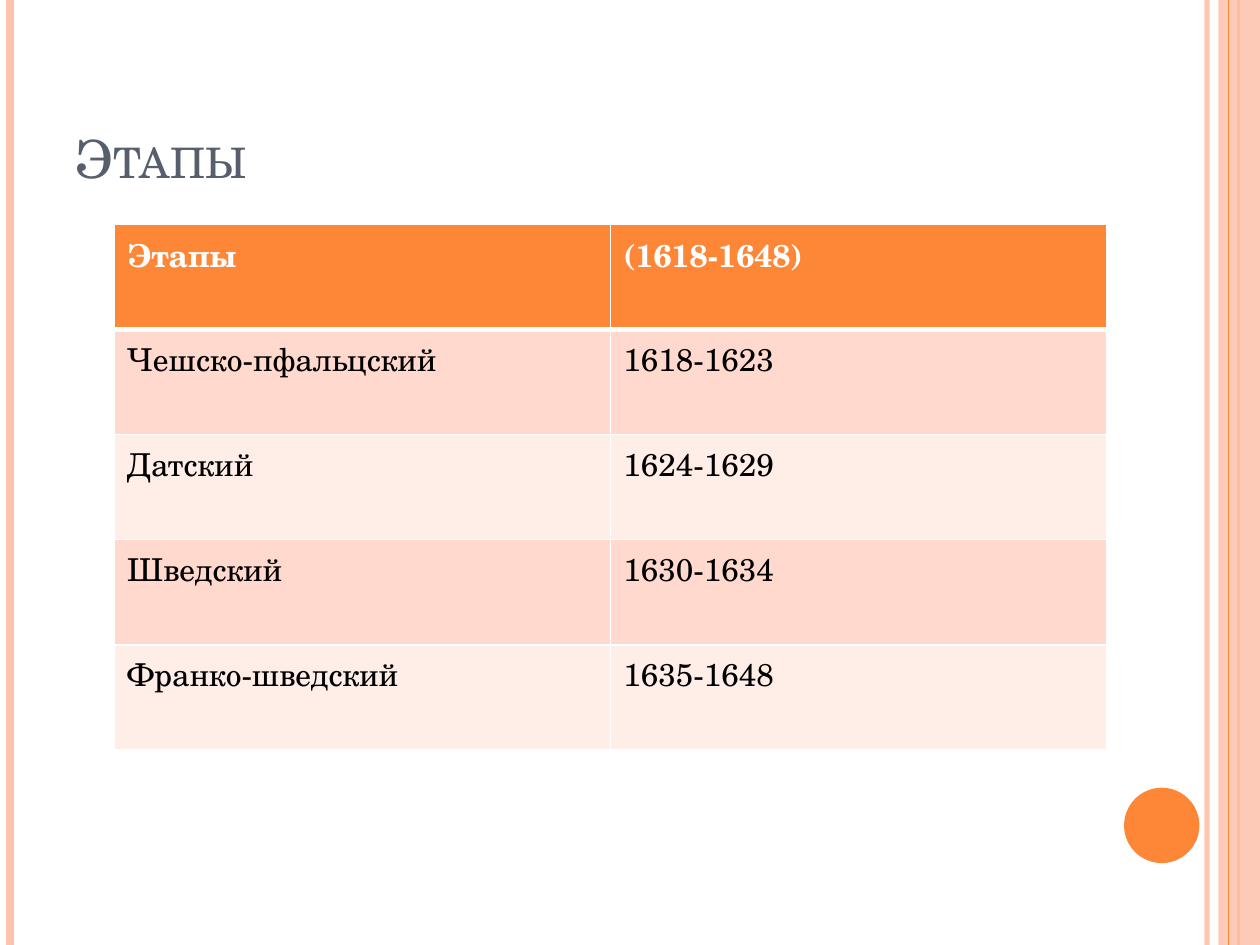
from pptx import Presentation
from pptx.util import Cm, Pt
from pptx.dml.color import RGBColor
from pptx.enum.shapes import MSO_CONNECTOR as Conn, MSO_SHAPE as Kind
from pptx.enum.text import MSO_ANCHOR as Anchor, PP_ALIGN as Align
from pptx.oxml.ns import qn
from lxml.etree import SubElement as Sub

FACE = "TeX Gyre Schola"
PEACH, ORANGE, WHITE = "FEC3AE", "FE8637", "FFFFFF"
tint = RGBColor.from_string


def style(run, hue, **form):
    for key, val in {"name": FACE, **form}.items():
        setattr(run.font, key, val)
    run.font.color.rgb = tint(hue)


def fade(fill, part):
    hue = fill._xPr.find(qn("a:solidFill"))[0]
    Sub(hue, qn("a:alpha")).set("val", str(part * 1000))


deck = Presentation()
deck.slide_width, deck.slide_height = Cm(25.4), Cm(19.05)
slide = deck.slides.add_slide(deck.slide_layouts[5])
shapes = slide.shapes

# Side stripes and band, from back to front
for x, hue, width, part in [
    (24.33, PEACH, 3, 93),
    (0.2, PEACH, 4.5, 100),
    (24.97, ORANGE, 1.5, 100),
    (24.56, PEACH, None, 87),
    (24.77, ORANGE, 0.75, 100),
]:
    if width:
        line = shapes.add_connector(Conn.STRAIGHT, Cm(x), 0, Cm(x), Cm(19.05))
        line.line.width = Pt(width)
        fill = line.line.fill
        fill.solid()
        fill.fore_color.rgb = tint(hue)
        Sub(line._element.spPr, qn("a:effectLst"))
    else:
        band = shapes.add_shape(Kind.RECTANGLE, Cm(x), 0, Cm(0.84), Cm(19.05))
        band.shadow.inherit = False
        band.line.fill.background()
        fill = band.fill
        fill.solid()
        fill.fore_color.rgb = tint(hue)
    if part < 100:
        fade(fill, part)

# Corner disc
disc = shapes.add_shape(Kind.OVAL, Cm(22.66), Cm(15.88), Cm(1.52), Cm(1.52))
disc.shadow.inherit = False
disc.fill.solid()
disc.fill.fore_color.rgb = tint(ORANGE)
disc.line.fill.background()

# Title
title = shapes.title
place = {"left": 1.27, "top": 0.76, "width": 20.75, "height": 3.18}
for key, val in place.items():
    setattr(title, key, Cm(val))
title.text_frame.vertical_anchor = Anchor.BOTTOM
para = title.text_frame.paragraphs[0]
para.alignment = Align.LEFT
run = para.add_run()
run.text = "Этапы"
style(run, "575F6D", size=Pt(30))
run.font._element.set("cap", "small")

# Table of stages
rows = [
    ("Этапы", "(1618-1648)"),
    ("Чешско-пфальцский", "1618-1623"),
    ("Датский", "1624-1629"),
    ("Шведский", "1630-1634"),
    ("Франко-шведский", "1635-1648"),
]
table = shapes.add_table(
    len(rows), 2, Cm(2.31), Cm(4.52), Cm(20), Cm(10.6)).table
for r, row in enumerate(rows):
    head = r == 0
    back = ORANGE if head else ("FFEDE8", "FFD9CE")[r % 2]
    for c, text in enumerate(row):
        cell = table.cell(r, c)
        run = cell.text_frame.paragraphs[0].add_run()
        run.text = text
        style(run, WHITE if head else "000000", size=Pt(18), bold=head)
        # White borders go before the fill in the cell properties
        props = cell._tc.get_or_add_tcPr()
        for side in "LRTB":
            thick = (head and side == "B") or (r == 1 and side == "T")
            edge = Sub(props, qn(f"a:ln{side}"), w=str(Pt(3 if thick else 1)))
            Sub(Sub(edge, qn("a:solidFill")), qn("a:srgbClr"), val=WHITE)
        cell.fill.solid()
        cell.fill.fore_color.rgb = tint(back)

deck.save("out.pptx")
